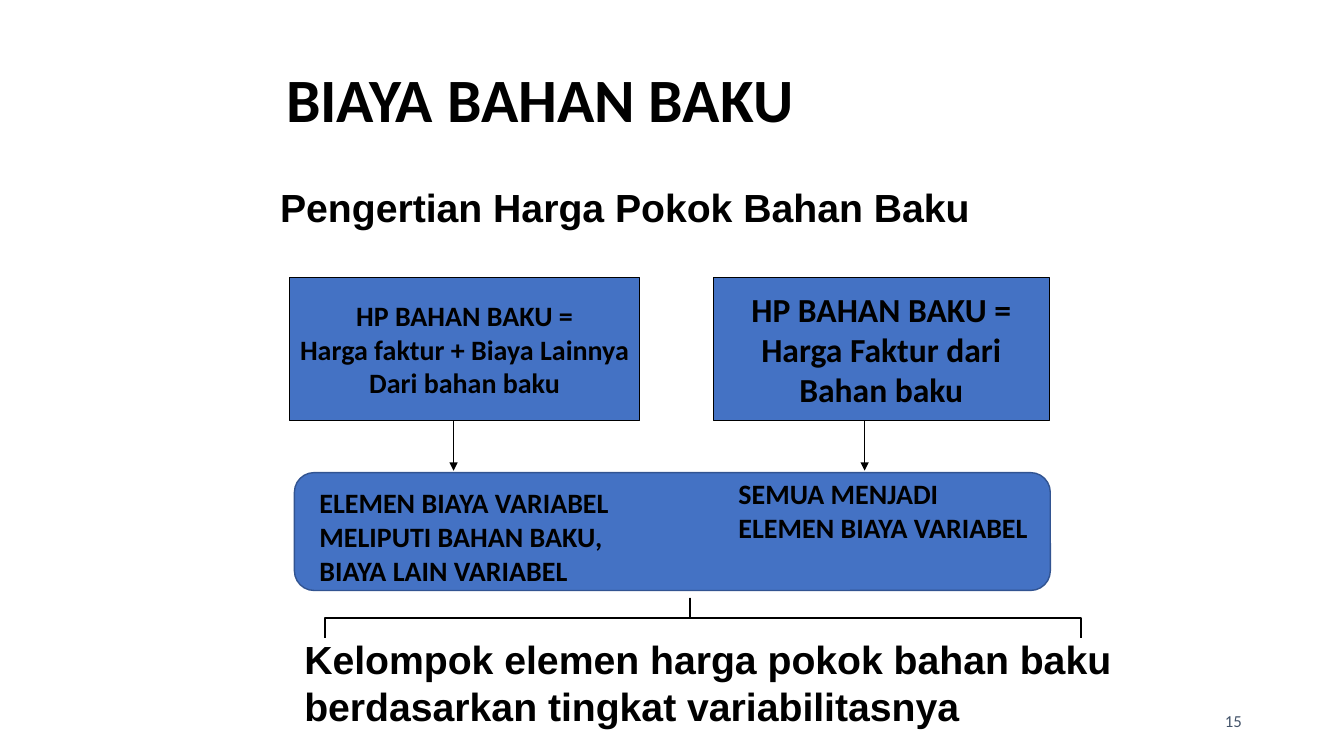
from lxml import etree
from pptx import Presentation
from pptx.dml.color import RGBColor
from pptx.enum.shapes import MSO_CONNECTOR, MSO_SHAPE
from pptx.enum.text import MSO_ANCHOR, MSO_AUTO_SIZE, PP_ALIGN
from pptx.oxml.ns import qn
from pptx.util import Cm, Pt

BLACK = RGBColor(0x00, 0x00, 0x00)
BLUE = RGBColor(0x44, 0x72, 0xC4)
DARK_BLUE = RGBColor(0x32, 0x54, 0x91)
SLATE = RGBColor(0x44, 0x54, 0x6A)

RECTANGLE = MSO_SHAPE.RECTANGLE
ROUNDED = MSO_SHAPE.ROUNDED_RECTANGLE
BRACE = MSO_SHAPE.LEFT_BRACE
STRAIGHT = MSO_CONNECTOR.STRAIGHT
LEFT, CENTER, RIGHT = PP_ALIGN.LEFT, PP_ALIGN.CENTER, PP_ALIGN.RIGHT
TOP, MIDDLE = MSO_ANCHOR.TOP, MSO_ANCHOR.MIDDLE
GROW = MSO_AUTO_SIZE.SHAPE_TO_FIT_TEXT

BOX_TOP, BOX_HEIGHT = 6.99, 3.61
ARROW_END = 11.86


def write_lines(shape, lines, size, font="Calibri", color=BLACK, bold=True,
                align=LEFT, anchor=TOP, wrap=False, spacing=None):
    """Write one paragraph per line in a shared style."""
    frame = shape.text_frame
    frame.word_wrap = wrap
    frame.vertical_anchor = anchor
    frame.text = "\n".join(lines)
    for paragraph in frame.paragraphs:
        paragraph.alignment = align
        paragraph.line_spacing = spacing
        paragraph.font.name = font
        paragraph.font.size = Pt(size)
        paragraph.font.bold = bold
        paragraph.font.color.rgb = color


def add_text(slide, left, top, width, height, lines, size, grow=True, **style):
    """Add a text box."""
    box = slide.shapes.add_textbox(Cm(left), Cm(top), Cm(width), Cm(height))
    write_lines(box, lines, size, **style)
    if grow:
        box.text_frame.auto_size = GROW


def add_outlined(slide, kind, left, top, width, height, line, weight, fill=None):
    """Add a preset shape with an outline and an optional fill."""
    shape = slide.shapes.add_shape(kind, Cm(left), Cm(top), Cm(width), Cm(height))
    shape.shadow.inherit = False
    if fill is None:
        shape.fill.background()
    else:
        shape.fill.solid()
        shape.fill.fore_color.rgb = fill
    shape.line.color.rgb = line
    shape.line.width = Pt(weight)
    return shape


def add_formula_box(slide, left, width, lines, size):
    """Add a blue box holding one definition of the cost price."""
    box = add_outlined(slide, RECTANGLE, left, BOX_TOP, width, BOX_HEIGHT,
                       BLACK, 0.75, BLUE)
    write_lines(box, lines, size, align=CENTER, anchor=MIDDLE)


def add_down_arrow(slide, x):
    """Add an arrow from a formula box down to the panel."""
    arrow = slide.shapes.add_connector(
        STRAIGHT, Cm(x), Cm(BOX_TOP + BOX_HEIGHT), Cm(x), Cm(ARROW_END))
    arrow.line.color.rgb = BLACK
    arrow.line.width = Pt(0.75)
    etree.SubElement(arrow.line._get_or_add_ln(), qn("a:tailEnd"), type="triangle")
    etree.SubElement(arrow._element.spPr, qn("a:effectLst"))


def add_brace(slide):
    """Add the square brace that spans the panel."""
    brace = add_outlined(slide, BRACE, 17.22, 6.05, 0.99, 19.05, BLACK, 1)
    brace.rotation = 90
    brace.adjustments[0] = 0
    brace.adjustments[1] = 0.517


def main():
    """Build the slide on raw material cost."""
    presentation = Presentation()
    presentation.slide_width, presentation.slide_height = Cm(33.87), Cm(19.05)
    slide = presentation.slides.add_slide(presentation.slide_layouts[6])

    add_outlined(slide, ROUNDED, 7.42, 11.91, 19.05, 2.97, DARK_BLUE, 1, BLUE)
    add_text(slide, 23.93, 17.65, 7.62, 1.02, ["15"], 12, grow=False, color=SLATE,
             bold=False, align=RIGHT, anchor=MIDDLE, wrap=True)
    add_text(slide, 6.96, 1.19, 20.5, 2.77, ["BIAYA BAHAN BAKU"], 44, grow=False,
             anchor=MIDDLE, wrap=True, spacing=0.9)

    add_formula_box(slide, 7.29, 8.84, [
        "HP BAHAN BAKU =", "Harga faktur + Biaya Lainnya", "Dari bahan baku"], 20)
    add_formula_box(slide, 17.98, 8.46, [
        "HP BAHAN BAKU =", "Harga Faktur dari", "Bahan baku"], 24)
    for x in (11.43, 21.79):
        add_down_arrow(slide, x)

    add_text(slide, 7.8, 12.12, 8.1, 2.82, [
        "ELEMEN BIAYA VARIABEL", "MELIPUTI BAHAN BAKU,", "BIAYA LAIN VARIABEL"], 20)
    add_text(slide, 18.36, 11.89, 8.1, 2.74, [
        "SEMUA MENJADI", "ELEMEN BIAYA VARIABEL"], 20)
    add_text(slide, 6.81, 4.5, 22.02, 1.45, ["Pengertian Harga Pokok Bahan Baku"],
             28, font="Arial", wrap=True)
    add_text(slide, 7.42, 15.88, 21.03, 2.64, [
        "Kelompok elemen harga pokok bahan baku berdasarkan tingkat variabilitasnya"],
        28, font="Arial", wrap=True)
    add_brace(slide)
    presentation.save("out.pptx")


if __name__ == "__main__":
    main()
